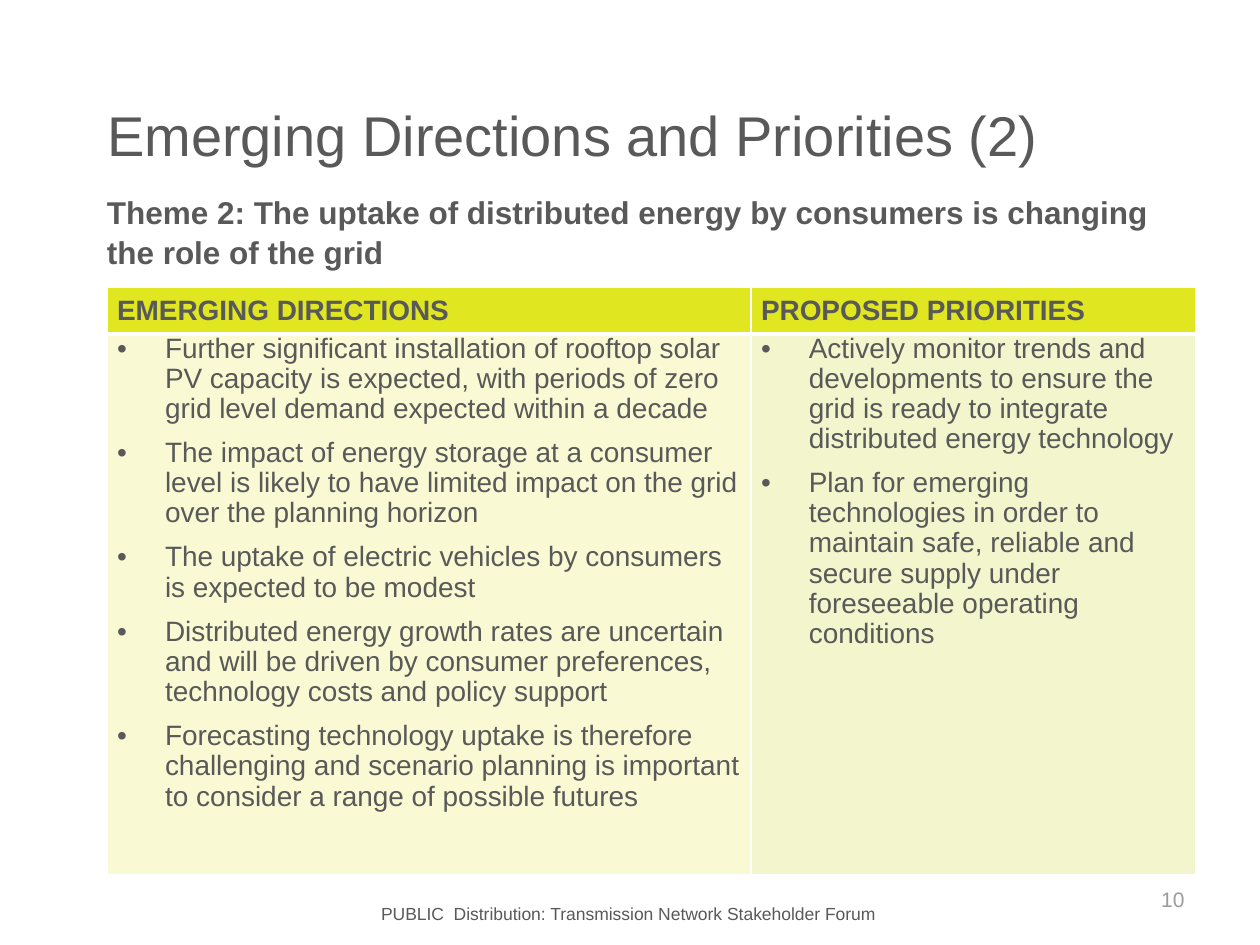
from lxml import etree
from pptx import Presentation
from pptx.dml.color import RGBColor
from pptx.enum.text import MSO_ANCHOR, PP_ALIGN
from pptx.oxml.ns import qn
from pptx.util import Inches, Pt

LEFT, CENTER, RIGHT = PP_ALIGN.LEFT, PP_ALIGN.CENTER, PP_ALIGN.RIGHT
TOP, MIDDLE = MSO_ANCHOR.TOP, MSO_ANCHOR.MIDDLE
TITLE_ONLY = 5

# Content
TITLE = "Emerging Directions and Priorities (2)"
THEME = ("Theme 2: The uptake of distributed energy by consumers is changing "
         "the role of the grid")
FOOTER = "PUBLIC  Distribution: Transmission Network Stakeholder Forum"
PAGE_NUMBER = "10"
COLUMNS = [
    ("EMERGING DIRECTIONS", [
        "Further significant installation of rooftop solar PV capacity is expected, "
        "with periods of zero grid level demand expected within a decade",
        "The impact of energy storage at a consumer level is likely to have limited "
        "impact on the grid over the planning horizon",
        "The uptake of electric vehicles by consumers is expected to be modest",
        "Distributed energy growth rates are uncertain and will be driven by consumer "
        "preferences, technology costs and policy support",
        "Forecasting technology uptake is therefore challenging and scenario planning "
        "is important to consider a range of possible futures",
    ]),
    ("PROPOSED PRIORITIES", [
        "Actively monitor trends and developments to ensure the grid is ready to "
        "integrate distributed energy technology",
        "Plan for emerging technologies in order to maintain safe, reliable and "
        "secure supply under foreseeable operating conditions",
    ]),
]

# Style and layout, in inches
FONT = "Arial"
COLORS = {"text": "595959", "number": "9B9B9B", "header": "E0E721", "border": "FFFFFF"}
BODY_FILLS = ["F9FAD3", "F3F6CD"]
TITLE_BOX = (0.75, 0.53, 8.96, 1.07)
THEME_BOX = (0.75, 1.47, 8.6, 0.71)
FOOTER_BOX = (2.23, 7.12, 5.51, 0.27)
NUMBER_BOX = (7.17, 6.94, 2.33, 0.4)
TABLE_LEFT, TABLE_TOP = 0.85, 2.28
COLUMN_WIDTHS = [5.11, 3.53]
ROW_HEIGHTS = [0.37, 4.29]
BULLET_INDENT = 0.38


def format_paragraph(paragraph, size, bold=False, color="text", align=LEFT):
    paragraph.alignment = align
    font = paragraph.font
    font.name, font.size, font.bold = FONT, Pt(size), bold
    font.color.rgb = RGBColor.from_string(COLORS[color])


def add_text(slide, box, text, size, anchor=TOP, **style):
    frame = slide.shapes.add_textbox(*map(Inches, box)).text_frame
    frame.word_wrap = True
    frame.vertical_anchor = anchor
    paragraph = frame.paragraphs[0]
    paragraph.text = text
    format_paragraph(paragraph, size, **style)
    return paragraph


def add_bullet(paragraph):
    properties = paragraph._p.get_or_add_pPr()
    properties.set("marL", str(Inches(BULLET_INDENT)))
    properties.set("indent", str(-Inches(BULLET_INDENT)))
    etree.SubElement(properties, qn("a:buFont"), typeface=FONT)
    etree.SubElement(properties, qn("a:buChar"), char="•")


def set_borders(cell, top, bottom):
    properties = cell._tc.get_or_add_tcPr()
    widths = {"a:lnL": 1, "a:lnR": 1, "a:lnT": top, "a:lnB": bottom}
    for position, (tag, width) in enumerate(widths.items()):
        line = etree.Element(qn(tag), w=str(Pt(width)))
        fill = etree.SubElement(line, qn("a:solidFill"))
        etree.SubElement(fill, qn("a:srgbClr"), val=COLORS["border"])
        properties.insert(position, line)


def format_cell(cell, fill, anchor, top, bottom):
    cell.fill.solid()
    cell.fill.fore_color.rgb = RGBColor.from_string(fill)
    cell.vertical_anchor = anchor
    cell.margin_left = cell.margin_right = Inches(0.08)
    cell.margin_top = cell.margin_bottom = 0
    set_borders(cell, top, bottom)


def add_priorities_table(slide):
    table = slide.shapes.add_table(
        len(ROW_HEIGHTS), len(COLUMNS), Inches(TABLE_LEFT), Inches(TABLE_TOP),
        Inches(sum(COLUMN_WIDTHS)), Inches(sum(ROW_HEIGHTS))).table
    for row, height in zip(table.rows, ROW_HEIGHTS):
        row.height = Inches(height)
    for index, (heading, points) in enumerate(COLUMNS):
        table.columns[index].width = Inches(COLUMN_WIDTHS[index])
        header, body = table.cell(0, index), table.cell(1, index)

        header.text = heading
        format_cell(header, COLORS["header"], MIDDLE, 1, 3)
        format_paragraph(header.text_frame.paragraphs[0], 16, bold=True)

        body.text = "\n".join(points)
        format_cell(body, BODY_FILLS[index], TOP, 3, 1)
        for number, paragraph in enumerate(body.text_frame.paragraphs):
            add_bullet(paragraph)
            format_paragraph(paragraph, 16)
            paragraph.line_spacing = 0.97
            paragraph.space_before = Pt(4 if number else 0)
            paragraph.space_after = Pt(4)


def main():
    presentation = Presentation()
    presentation.slide_width, presentation.slide_height = Inches(10), Inches(7.5)
    slide = presentation.slides.add_slide(presentation.slide_layouts[TITLE_ONLY])

    # Title and theme
    title = slide.shapes.title
    title.left, title.top, title.width, title.height = map(Inches, TITLE_BOX)
    title.text_frame.text = TITLE
    title.text_frame.vertical_anchor = MIDDLE
    format_paragraph(title.text_frame.paragraphs[0], 32)
    theme = add_text(slide, THEME_BOX, THEME, 18, bold=True)
    theme.line_spacing = 1.05

    add_priorities_table(slide)

    # Footer and page number
    add_text(slide, FOOTER_BOX, FOOTER, 10, align=CENTER)
    add_text(slide, NUMBER_BOX, PAGE_NUMBER, 12, MIDDLE, color="number", align=RIGHT)

    presentation.save("out.pptx")


if __name__ == "__main__":
    main()
